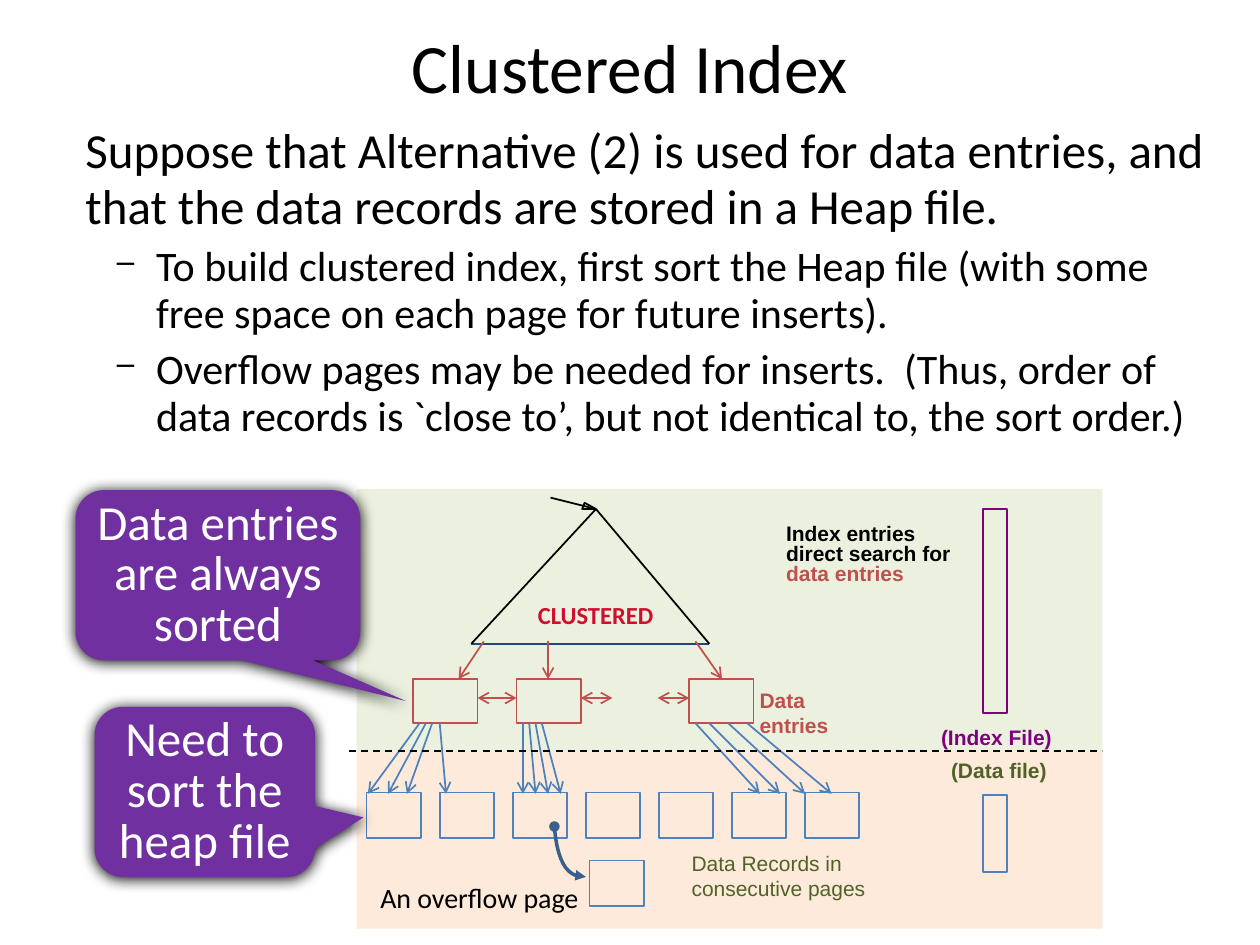
from dataclasses import dataclass

from lxml.etree import SubElement
from pptx import Presentation
from pptx.dml.color import RGBColor
from pptx.enum.dml import MSO_LINE
from pptx.enum.shapes import MSO_CONNECTOR, MSO_SHAPE
from pptx.enum.text import MSO_ANCHOR, PP_ALIGN
from pptx.oxml.ns import qn
from pptx.util import Inches, Pt


@dataclass(frozen=True)
class Theme:
    black: str = "000000"
    white: str = "FFFFFF"
    navy: str = "1F497D"
    blue: str = "4F81BD"
    dark_blue: str = "3A5F8C"
    red: str = "C0504D"
    crimson: str = "CF0E30"
    purple: str = "800080"
    callout: str = "7030A0"
    green: str = "4F6228"
    index_panel: str = "EBF1DE"
    data_panel: str = "FDEADA"
    heading_font: str = "Calibri"
    label_font: str = "Arial"
    title_size: float = 39.6
    body_size: float = 28
    bullet_size: float = 24
    note_size: float = 16
    tree_size: float = 14
    label_size: float = 12


@dataclass(frozen=True)
class Box:
    left: float
    top: float
    width: float
    height: float

    def inside(self, left, top, width, height):
        return Box(self.left + left, self.top + top, width, height)

    def point(self, x, y):
        return Inches(self.left + x), Inches(self.top + y)

    def lengths(self):
        return [Inches(v) for v in (self.left, self.top, self.width, self.height)]


THEME = Theme()


def color(value):
    return RGBColor.from_string(value)


def style_paragraph(paragraph, size, text_color, font=THEME.heading_font, bold=False):
    for run in paragraph.runs:
        run.font.size = Pt(size)
        run.font.name = font
        run.font.bold = bold
        run.font.color.rgb = color(text_color)


def add_rectangle(slide, box, fill=None, line=None):
    shape = slide.shapes.add_shape(MSO_SHAPE.RECTANGLE, *box.lengths())
    shape.shadow.inherit = False
    style_shape(shape, fill, line)
    return shape


def style_shape(shape, fill, line, width=1):
    if fill:
        shape.fill.solid()
        shape.fill.fore_color.rgb = color(fill)
    else:
        shape.fill.background()
    if line:
        shape.line.color.rgb = color(line)
        shape.line.width = Pt(width)
    else:
        shape.line.fill.background()


def add_path(slide, points, line, width=1, close=False):
    builder = slide.shapes.build_freeform(*points[0])
    builder.add_line_segments(points[1:], close=close)
    shape = builder.convert_to_shape()
    shape.shadow.inherit = False
    style_shape(shape, None, line, width)
    return shape


def set_line_ends(shape, head=None, tail=None):
    line = shape.line._get_or_add_ln()
    for tag, end in (("a:headEnd", head), ("a:tailEnd", tail)):
        if end:
            SubElement(line, qn(tag), type=end)


def add_line(slide, start, end, line, head=None, tail=None):
    connector = slide.shapes.add_connector(MSO_CONNECTOR.STRAIGHT, *start, *end)
    connector.line.color.rgb = color(line)
    connector.line.width = Pt(1)
    set_line_ends(connector, head, tail)
    SubElement(connector._element.spPr, qn("a:effectLst"))
    return connector


def add_label(slide, box, text, text_color, size=THEME.label_size,
              font=THEME.label_font, bold=True, wrap=False):
    frame = slide.shapes.add_textbox(*box.lengths()).text_frame
    frame.word_wrap = wrap
    frame.text = text
    style_paragraph(frame.paragraphs[0], size, text_color, font, bold)
    return frame


def add_title(slide, box, text):
    frame = add_label(slide, box, text, THEME.black, THEME.title_size,
                      THEME.heading_font, bold=False, wrap=True)
    frame.vertical_anchor = MSO_ANCHOR.MIDDLE
    frame.paragraphs[0].alignment = PP_ALIGN.CENTER


def add_body(slide, box, lead, bullets):
    frame = add_label(slide, box, lead, THEME.black, THEME.body_size,
                      THEME.heading_font, bold=False, wrap=True)
    frame.paragraphs[0].line_spacing = Pt(32)
    frame.paragraphs[0].space_before = Pt(5.6)
    for text in bullets:
        paragraph = frame.add_paragraph()
        paragraph.text = text
        paragraph.level = 1
        paragraph.line_spacing = Pt(27)
        paragraph.space_before = Pt(4.8)
        style_paragraph(paragraph, THEME.bullet_size, THEME.black)
        properties = paragraph._p.get_or_add_pPr()
        properties.set("marL", str(Inches(0.56)))
        properties.set("indent", str(Inches(-0.31)))
        SubElement(properties, qn("a:buSzPct"), val="75000")
        SubElement(properties, qn("a:buChar"), char="–")


def add_index_file(slide, box):
    add_rectangle(slide, box, fill=THEME.index_panel)
    # Search tree with its root pointer
    apex, left, right = box.point(1.9, 0.16), box.point(0.91, 1.23), box.point(2.8, 1.23)
    add_line(slide, left, right, THEME.navy)
    add_line(slide, left, apex, THEME.black)
    add_line(slide, apex, right, THEME.black)
    add_line(slide, box.point(1.54, 0.07), apex, THEME.black)
    add_path(slide, [box.point(1.81, 0.11), apex, box.point(1.79, 0.16)],
             THEME.black, close=True)
    add_label(slide, box.inside(1.34, 0.83, 1.12, 0.33), "CLUSTERED", THEME.crimson,
              THEME.tree_size, THEME.heading_font)
    # Data entries, reached from the tree and chained to each other
    for entry_x, start_x, end_x in ((0.45, 1.01, 0.81), (1.27, 1.52, 1.52), (2.64, 2.69, 2.9)):
        add_rectangle(slide, box.inside(entry_x, 1.51, 0.51, 0.35), line=THEME.red)
        add_line(slide, box.point(start_x, 1.21), box.point(end_x, 1.51),
                 THEME.red, tail="arrow")
    for start_x, end_x in ((0.96, 1.27), (1.78, 2.03), (2.39, 2.64)):
        add_line(slide, box.point(start_x, 1.66), box.point(end_x, 1.66),
                 THEME.red, head="arrow", tail="arrow")
    add_label(slide, box.inside(3.1, 1.53, 0.85, 0.5), "Data entries", THEME.red, wrap=True)
    # Explanation and file extent
    explanation = (("Index entries", THEME.black), ("direct search for", THEME.black),
                   ("data entries", THEME.red))
    for row, (text, text_color) in enumerate(explanation):
        add_label(slide, box.inside(3.31, 0.2 + 0.16 * row, 1.55, 0.3), text, text_color)
    add_rectangle(slide, box.inside(4.97, 0.16, 0.19, 1.62), line=THEME.purple)
    add_label(slide, box.inside(4.54, 1.82, 1.08, 0.3), "(Index File)", THEME.purple)


def add_data_file(slide, box):
    add_rectangle(slide, box, fill=THEME.data_panel)
    # Record pages and the links from the data entries above
    for page in range(7):
        add_rectangle(slide, box.inside(0.08 + 0.58 * page, 0.33, 0.43, 0.36), line=THEME.blue)
    links = ((0.5, 0.09), (0.55, 0.25), (0.6, 0.4), (0.66, 0.71),
             (1.32, 1.32), (1.37, 1.42), (1.42, 1.52), (1.47, 1.62),
             (2.69, 3.2), (2.8, 3.36), (2.95, 3.56), (3.1, 3.77))
    for start_x, end_x in links:
        add_line(slide, box.point(start_x, -0.22), box.point(end_x, 0.34),
                 THEME.blue, tail="arrow")
    divider = add_line(slide, box.point(-0.06, 0), box.point(box.width, 0), THEME.black)
    divider.line.dash_style = MSO_LINE.DASH
    # Overflow page with its curved link
    add_rectangle(slide, box.inside(1.85, 0.87, 0.43, 0.36), line=THEME.blue)
    controls = ((1.57, 0.6), (1.59, 0.84), (1.65, 1.01), (1.82, 1))
    curve = []
    for step in range(13):
        t = step / 12
        weights = ((1 - t) ** 3, 3 * t * (1 - t) ** 2, 3 * t ** 2 * (1 - t), t ** 3)
        curve.append(box.point(*(sum(w * p[axis] for w, p in zip(weights, controls))
                                 for axis in (0, 1))))
    link = add_path(slide, curve, THEME.dark_blue, width=2)
    set_line_ends(link, head="oval", tail="triangle")
    add_label(slide, box.inside(0.09, 0.98, 1.8, 0.37), "An overflow page", THEME.black,
              THEME.note_size, THEME.heading_font, bold=False)
    # File extent and explanation
    add_rectangle(slide, box.inside(4.97, 0.35, 0.19, 0.61), line=THEME.blue)
    add_label(slide, box.inside(4.62, 0, 0.97, 0.3), "(Data file)", THEME.green)
    add_label(slide, box.inside(2.56, 0.74, 2.02, 0.5), "Data Records in consecutive pages",
              THEME.green, bold=False, wrap=True)


def add_callout(slide, box, text, pointer):
    shape = slide.shapes.add_shape(MSO_SHAPE.ROUNDED_RECTANGULAR_CALLOUT, *box.lengths())
    shape.adjustments[0], shape.adjustments[1] = pointer
    shape.shadow.inherit = False
    style_shape(shape, THEME.callout, None)
    effects = shape._element.spPr.find(qn("a:effectLst"))
    shadow = SubElement(effects, qn("a:outerShdw"), blurRad=str(Pt(8.5)), dist=str(Pt(1)),
                        dir="5400000", algn="ctr", rotWithShape="0")
    SubElement(shadow, qn("a:srgbClr"), val=THEME.black)
    frame = shape.text_frame
    frame.word_wrap = True
    frame.margin_top = frame.margin_bottom = 0
    frame.vertical_anchor = MSO_ANCHOR.MIDDLE
    frame.text = text
    paragraph = frame.paragraphs[0]
    paragraph.alignment = PP_ALIGN.CENTER
    paragraph.line_spacing = Pt(29)
    style_paragraph(paragraph, THEME.body_size, THEME.white)


def main():
    presentation = Presentation()
    presentation.slide_width, presentation.slide_height = Inches(10), Inches(7.5)
    slide = presentation.slides.add_slide(presentation.slide_layouts[6])
    add_title(slide, Box(0.75, 0.17, 8.5, 0.71), "Clustered Index")
    add_body(slide, Box(0.58, 0.92, 9.08, 2.75),
             "Suppose that Alternative (2) is used for data entries, and that the data "
             "records are stored in a Heap file.",
             ("To build clustered index, first sort the Heap file (with some free space "
              "on each page for future inserts).",
              "Overflow pages may be needed for inserts.  (Thus, order of data records is "
              "`close to’, but not identical to, the sort order.)"))
    add_index_file(slide, Box(2.83, 3.88, 5.92, 2.08))
    add_data_file(slide, Box(2.83, 5.96, 5.92, 1.41))
    add_callout(slide, Box(0.75, 5.61, 1.75, 1.35), "Need to sort the heap file", (0.72, 0.15))
    add_callout(slide, Box(0.6, 3.89, 2.26, 1.35), "Data entries are always sorted", (0.66, 0.74))
    presentation.save("out.pptx")


if __name__ == "__main__":
    main()
